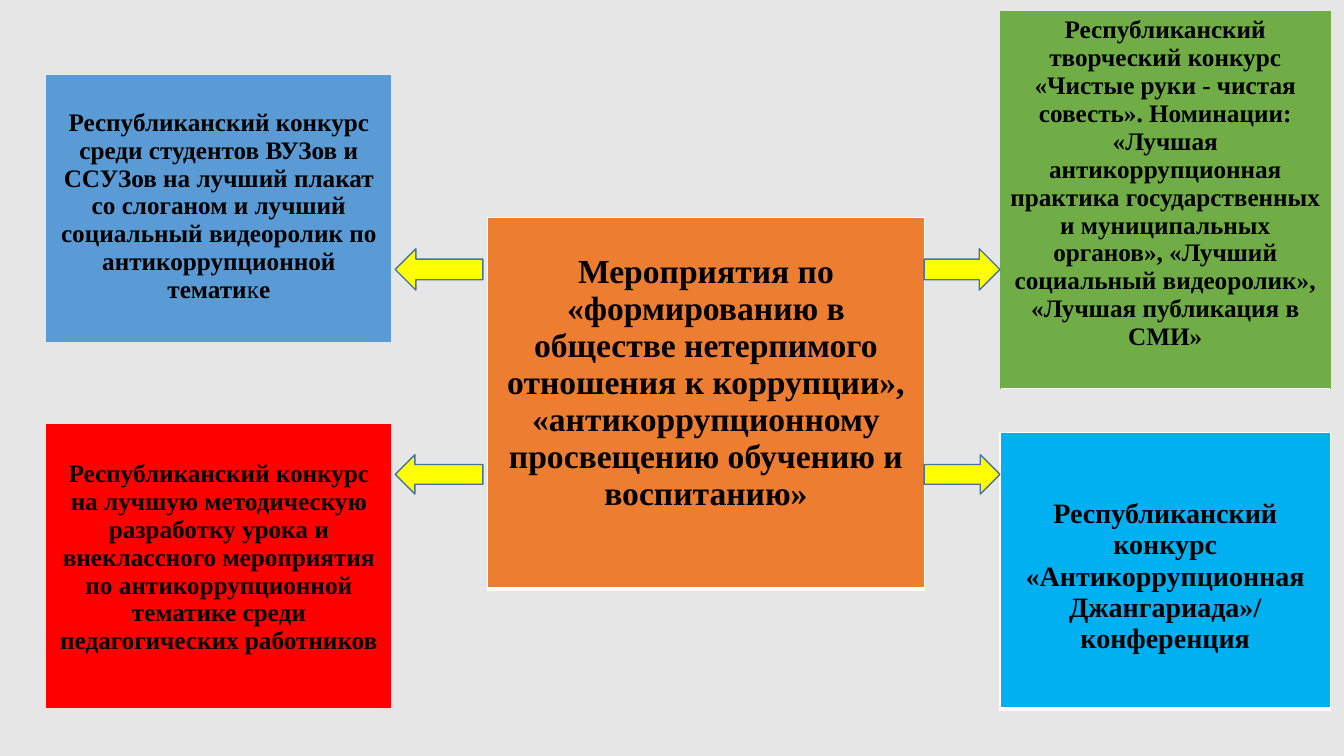
from collections import namedtuple

from lxml.etree import SubElement
from pptx import Presentation
from pptx.dml.color import RGBColor
from pptx.enum.shapes import MSO_SHAPE as Preset
from pptx.enum.text import PP_ALIGN as Align
from pptx.oxml.ns import qn
from pptx.util import Cm, Pt

GREY = RGBColor(0xE7, 0xE6, 0xE6)
WHITE = RGBColor(0xFF, 0xFF, 0xFF)
BLACK = RGBColor(0x00, 0x00, 0x00)
ORANGE = RGBColor(0xED, 0x7D, 0x31)
GREEN = RGBColor(0x70, 0xAD, 0x47)
BLUE = RGBColor(0x5B, 0x9B, 0xD5)
RED = RGBColor(0xFF, 0x00, 0x00)
CYAN = RGBColor(0x00, 0xB0, 0xF0)
YELLOW = RGBColor(0xFF, 0xFF, 0x00)
STEEL = RGBColor(0x43, 0x73, 0x9E)

FONT = "Times New Roman"
SIDE_MARGIN = 0.23
WHITE_FRAME = ((WHITE, 1), (WHITE, 3))
GREEN_FRAME = ((GREEN, 0.5), (WHITE, 1))

Box = namedtuple("Box", "left top width height")
CENTRE = Box(12.29, 5.49, 11, 9.35)
TOP_LEFT = Box(1.17, 1.9, 8.69, 6.73)
BOTTOM_LEFT = Box(1.17, 10.69, 8.69, 7.16)
TOP_RIGHT = Box(25.2, 0.28, 8.33, 9.5)
BOTTOM_RIGHT = Box(25.2, 10.9, 8.33, 6.96)

GOAL = (
    "Мероприятия по «формированию в обществе нетерпимого отношения к коррупции», "
    "«антикоррупционному просвещению обучению и воспитанию»"
)
POSTER = (
    "Республиканский конкурс среди студентов ВУЗов и ССУЗов на лучший плакат "
    "со слоганом и лучший социальный видеоролик по антикоррупционной темати"
)
LESSON = (
    "Республиканский конкурс на лучшую методическую разработку урока и "
    "внеклассного мероприятия по антикоррупционной тематике среди "
    "педагогических работников"
)
CREATIVE = "Республиканский творческий конкурс"
NOMINATIONS = (
    "«Чистые руки - чистая совесть». Номинации: «Лучшая антикоррупционная "
    "практика государственных и муниципальных органов», «Лучший социальный "
    "видеоролик», «Лучшая публикация в СМИ»"
)
JANGARIADA = "Республиканский конкурс «Антикоррупционная Джангариада»/ конференция"


def add_text(paragraph, text, size=18, bold=True, color=BLACK):
    """Append a formatted run to a centred paragraph."""
    paragraph.alignment = Align.CENTER
    run = paragraph.add_run()
    run.text = text
    run.font.name = FONT
    run.font.size = Pt(size)
    run.font.bold = bold
    run.font.color.rgb = color


def set_borders(cell, frame):
    """Draw the sides and the bottom of a cell, or no border without a frame."""
    properties = cell._tc.get_or_add_tcPr()
    for side in ("lnL", "lnR", "lnT", "lnB"):
        border = SubElement(properties, qn(f"a:{side}"))
        if frame is None:
            SubElement(border, qn("a:noFill"))
            continue
        color, width = frame[side == "lnB"]
        border.set("w", str(Pt(width)))
        fill = SubElement(border, qn("a:solidFill"))
        SubElement(fill, qn("a:srgbClr")).set("val", str(color))


def add_card(slide, box, paragraphs, fill, text_top, size=18, frame=None):
    """Fill the box with a one-cell table; each paragraph lists (text, bold) parts."""
    card = slide.shapes.add_table(1, 1, *map(Cm, box)).table
    card.first_row = card.horz_banding = False
    cell = card.cell(0, 0)
    set_borders(cell, frame)
    cell.fill.solid()
    cell.fill.fore_color.rgb = fill
    cell.margin_left = cell.margin_right = Cm(SIDE_MARGIN)
    cell.margin_top = Cm(text_top)
    for index, parts in enumerate(paragraphs):
        body = cell.text_frame
        paragraph = body.add_paragraph() if index else body.paragraphs[0]
        for text, bold in parts:
            add_text(paragraph, text, size=size, bold=bold)


def add_arrow(slide, preset, box):
    """Place one yellow block arrow in the box."""
    arrow = slide.shapes.add_shape(preset, *map(Cm, box))
    arrow.shadow.inherit = False
    arrow.fill.solid()
    arrow.fill.fore_color.rgb = YELLOW
    arrow.line.color.rgb = STEEL
    arrow.line.width = Pt(1)


def add_arrow_pair(slide, box, offset, height):
    """Point two arrows outwards from the sides of the box, offset from its top."""
    top = box.top + offset
    right = box.left + box.width
    add_arrow(slide, Preset.LEFT_ARROW, Box(box.left - 2.33, top, 2.21, height))
    add_arrow(slide, Preset.RIGHT_ARROW, Box(right, top, TOP_RIGHT.left - right, height))


def build_events_slide(deck):
    """Lay out the central goal, its four events and the arrows between them."""
    slide = deck.slides.add_slide(deck.slide_layouts[6])
    slide.background.fill.solid()
    slide.background.fill.fore_color.rgb = GREY
    poster_parts = [(POSTER, True), ("к", False), ("е", True)]
    add_card(slide, CENTRE, [[(GOAL, True)]], ORANGE, 0.89, size=24, frame=WHITE_FRAME)
    add_card(slide, TOP_RIGHT, [[(CREATIVE, True)], [(NOMINATIONS, True)]], GREEN, 0.13,
             frame=GREEN_FRAME)
    add_card(slide, TOP_LEFT, [poster_parts], BLUE, 0.84)
    add_card(slide, BOTTOM_LEFT, [[(LESSON, True)]], RED, 0.9)
    add_card(slide, BOTTOM_RIGHT, [[(JANGARIADA, True)]], CYAN, 1.67, size=20,
             frame=WHITE_FRAME)
    add_arrow_pair(slide, CENTRE, 0.78, 1.04)
    add_arrow_pair(slide, CENTRE, 5.97, 0.99)


def main():
    """Build the deck and save it."""
    deck = Presentation()
    deck.slide_width, deck.slide_height = Cm(33.87), Cm(19.05)
    build_events_slide(deck)
    deck.save("out.pptx")


if __name__ == "__main__":
    main()
